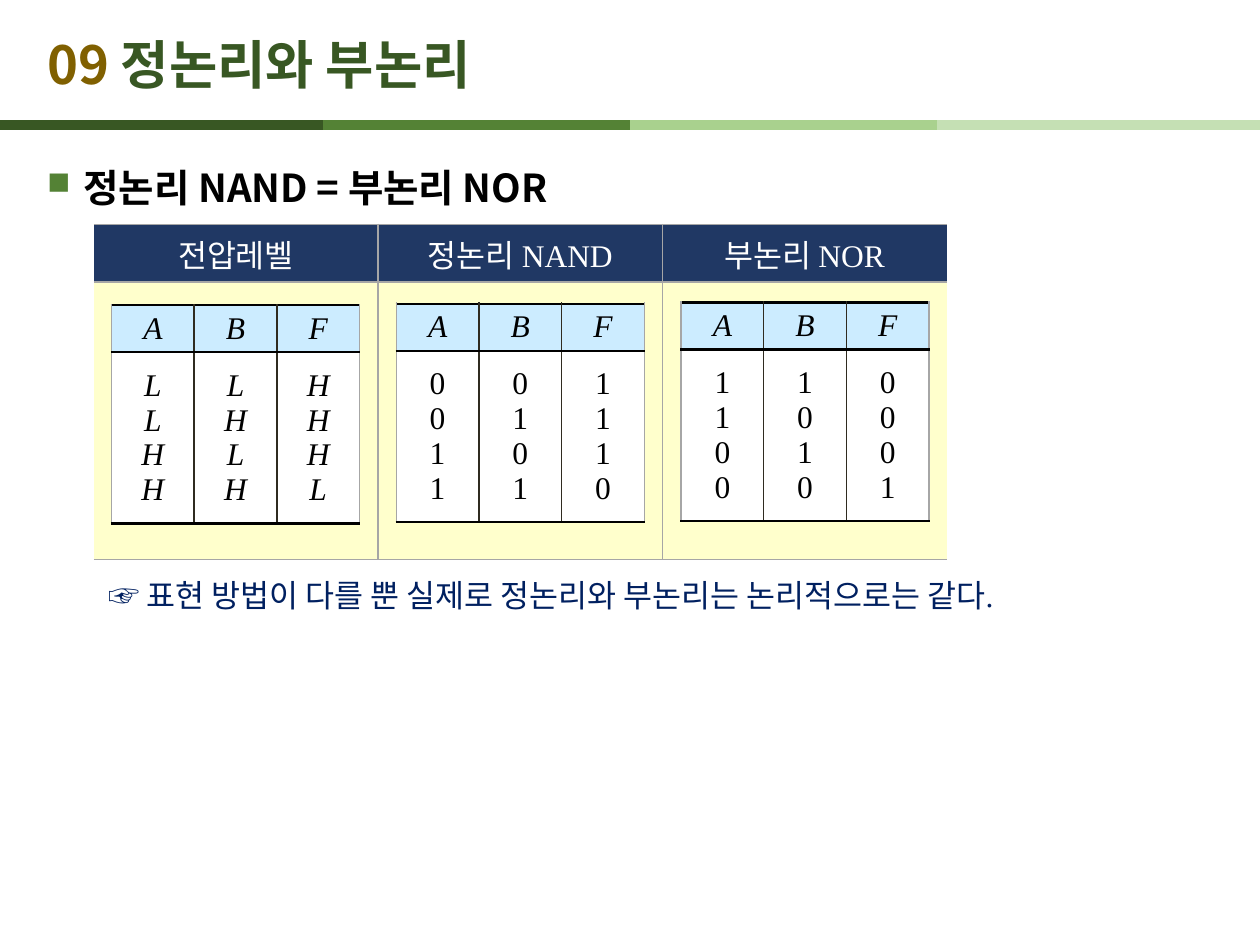
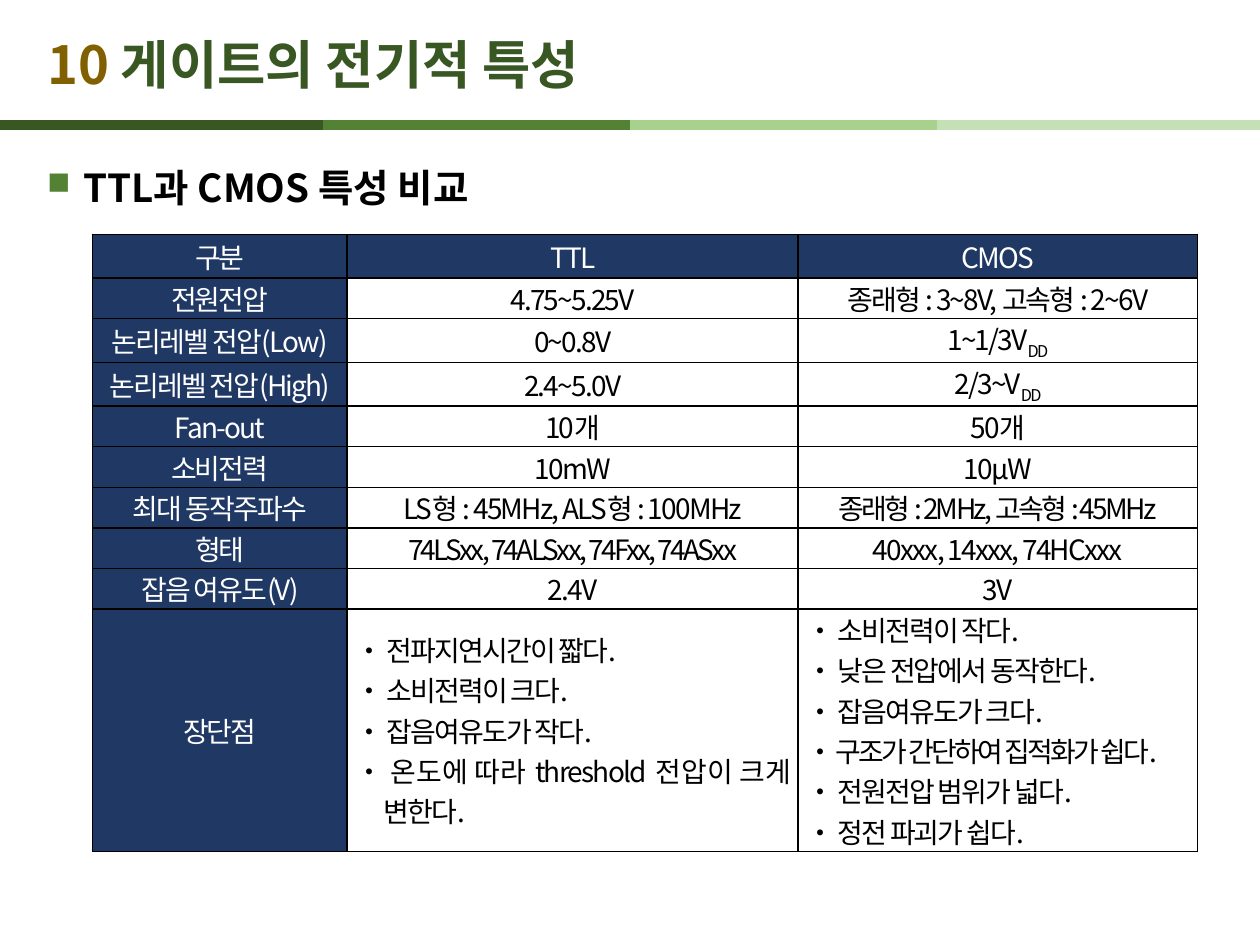
from dataclasses import dataclass

from lxml import etree
from pptx import Presentation
from pptx.dml.color import RGBColor
from pptx.enum.shapes import MSO_CONNECTOR
from pptx.enum.text import MSO_ANCHOR, PP_ALIGN
from pptx.oxml.ns import qn
from pptx.util import Inches, Pt

STRAIGHT = MSO_CONNECTOR.STRAIGHT
TOP, MIDDLE = MSO_ANCHOR.TOP, MSO_ANCHOR.MIDDLE
LEFT, CENTER, JUSTIFY = PP_ALIGN.LEFT, PP_ALIGN.CENTER, PP_ALIGN.JUSTIFY


@dataclass(frozen=True)
class Theme:
    sans: str = "Noto Sans CJK KR"
    serif: str = "Times New Roman"
    bands: tuple = ("385723", "548235", "A9D18E", "C5E0B4")
    number: str = "806000"
    title: str = "385723"
    bullet: str = "548235"
    black: str = "000000"
    white: str = "FFFFFF"
    navy: str = "203864"
    note: str = "002060"
    cream: str = "FFFFCC"
    sky: str = "CCECFF"
    grey: str = "A6A6A6"
    ink: str = "2F2B20"
    title_size: int = 30
    heading_size: int = 22
    table_size: int = 18
    small_size: int = 16


theme = Theme()
UNIT = Inches(0.1)
COLUMNS, ROWS = 100, 75

deck = Presentation()
deck.slide_width, deck.slide_height = COLUMNS * UNIT, ROWS * UNIT


def write(para, text, color, spacing=0, baseline=0, asian=None, **formats):
    span = para.add_run()
    span.text = text
    for name, value in formats.items():
        setattr(span.font, name, value)
    span.font.color.rgb = RGBColor.from_string(color)
    properties = span._r.get_or_add_rPr()
    for name, value in {"spc": spacing, "baseline": baseline}.items():
        if value:
            properties.set(name, str(value))
    if asian:
        etree.SubElement(properties, qn("a:ea"), typeface=asian)


def dress(cell, fill, edges, margins=None, anchor=MIDDLE):
    cell.fill.solid()
    cell.fill.fore_color.rgb = RGBColor.from_string(fill)
    cell.vertical_anchor = anchor
    if margins:
        for side, gap in zip(("left", "top", "right", "bottom"), margins):
            setattr(cell, f"margin_{side}", Inches(gap))
    properties = cell._tc.get_or_add_tcPr()
    for place, (side, edge) in enumerate(zip("LRTB", edges)):
        line = etree.Element(qn(f"a:ln{side}"))
        if edge:
            color, width = edge
            line.set("w", str(Pt(width)))
            solid = etree.SubElement(line, qn("a:solidFill"))
            etree.SubElement(solid, qn("a:srgbClr"), val=color)
        else:
            etree.SubElement(line, qn("a:noFill"))
        properties.insert(place, line)


topics = [
    ("09 ", "정논리와 부논리", "정논리 NAND = 부논리 NOR"),
    ("10 ", "게이트의 전기적 특성", "TTL과 CMOS 특성 비교"),
]
pages = []
for number, title, heading in topics:
    page = deck.slides.add_slide(deck.slide_layouts[6])
    pages.append(page)
    for start, color in zip((0, 25.6, 50, 74.4), theme.bands):
        x, y = int(start * UNIT), int(9.93 * UNIT)
        band = page.shapes.add_connector(STRAIGHT, x, y, x + int(25.6 * UNIT), y)
        band.line.color.rgb = RGBColor.from_string(color)
        band.line.width = Pt(6)
        etree.SubElement(band._element.spPr, qn("a:effectLst"))

    box = page.shapes.add_textbox(*(int(n * UNIT) for n in (2.75, 2.05, 85.8, 6)))
    box.text_frame.word_wrap = True
    box.text_frame.vertical_anchor = MIDDLE
    for text, color in ((number, theme.number), (title, theme.title)):
        write(box.text_frame.paragraphs[0], text, color, name=theme.sans,
              size=Pt(theme.title_size), bold=True)

    box = page.shapes.add_textbox(*(int(n * UNIT) for n in (2.75, 10.7, 94.5, 6.5)))
    box.text_frame.word_wrap = True
    para = box.text_frame.paragraphs[0]
    indent = para._p.get_or_add_pPr()
    for name, value in {"marL": 0.29, "indent": -0.29}.items():
        indent.set(name, str(Inches(value)))
    tint = etree.SubElement(indent, qn("a:buClr"))
    etree.SubElement(tint, qn("a:srgbClr"), val=theme.bullet)
    etree.SubElement(indent, qn("a:buSzPct"), val="82000")
    etree.SubElement(indent, qn("a:buChar"), char="■")
    para.line_spacing = 1.5
    write(para, heading, theme.black, name=theme.sans,
          size=Pt(theme.heading_size), bold=True)

logic_page, gate_page = pages
serif = {"name": theme.serif, "size": Pt(theme.table_size), "bold": False}
grey, ink, rule = (theme.grey, 1), (theme.ink, 1), (theme.black, 1.5)

frame = logic_page.shapes.add_table(2, 3, *(int(n * UNIT) for n in (7.45, 17.8, 67.7, 26.6)))
panel = frame.table
panel.first_row = panel.horz_banding = False
for row, height in zip(panel.rows, (4.6, 22)):
    row.height = int(height * UNIT)
for column, label in enumerate(("전압레벨", "정논리 NAND", "부논리 NOR")):
    edges = (grey if column else None, grey if column < 2 else None, grey, grey)
    dress(panel.cell(0, column), theme.navy, edges, anchor=TOP)
    dress(panel.cell(1, column), theme.cream, edges, anchor=TOP)
    para = panel.cell(0, column).text_frame.paragraphs[0]
    para.alignment = CENTER
    write(para, label, theme.white, **serif)

truth_tables = [("LLHH", "LHLH", "HHHL"), ("0011", "0101", "1110"), ("1100", "1010", "0001")]
for index, values in enumerate(truth_tables):
    place = (8.85 + 22.6 * index, 24.2 - 0.1 * index, 19.7, 17.35)
    frame = logic_page.shapes.add_table(2, 3, *(int(n * UNIT) for n in place))
    truth = frame.table
    truth.first_row = truth.horz_banding = False
    for row, height in zip(truth.rows, (3.75, 13.6)):
        row.height = int(height * UNIT)
    for column, (variable, states) in enumerate(zip("ABF", values)):
        edges = (ink if column else grey, ink if column < 2 else grey, rule, rule)
        for row, (letters, fill) in enumerate(((variable, theme.sky), (states, theme.white))):
            cell = truth.cell(row, column)
            dress(cell, fill, edges, (0.02,) * 4)
            for line, letter in enumerate(letters):
                para = cell.text_frame.add_paragraph() if line else cell.text_frame.paragraphs[0]
                para.alignment = CENTER
                write(para, letter, theme.black, italic=letter.isalpha(), **serif)

box = logic_page.shapes.add_textbox(*(int(n * UNIT) for n in (7.6, 45.2, 89.7, 4.6)))
box.text_frame.word_wrap = True
para = box.text_frame.paragraphs[0]
para.alignment = LEFT
write(para, "☞ 표현 방법이 다를 뿐 실제로 정논리와 부논리는 논리적으로는 같다.", theme.note, **serif)

comparison = [
    ("구분", "TTL", "CMOS"),
    ("전원전압", "4.75~5.25V", "종래형 : 3~8V, 고속형 : 2~6V"),
    ("논리레벨 전압(Low)", "0~0.8V", "1~1/3V_DD"),
    ("논리레벨 전압(High)", "2.4~5.0V", "2/3~V_DD"),
    ("Fan-out", "10개", "50개"),
    ("소비전력", "10mW", "10μW"),
    ("최대 동작주파수", "LS형 : 45MHz, ALS형 : 100MHz", "종래형 : 2MHz, 고속형 : 45MHz"),
    ("형태", "74LSxx, 74ALSxx, 74Fxx, 74ASxx", "40xxx, 14xxx, 74HCxxx"),
    ("잡음 여유도(V)", "2.4V", "3V"),
    (
        "장단점",
        "• 전파지연시간이 짧다.\n• 소비전력이 크다.\n• 잡음여유도가 작다.\n"
        "• 온도에 따라 threshold 전압이 크게 변한다.",
        "• 소비전력이 작다.\n• 낮은 전압에서 동작한다.\n• 잡음여유도가 크다.\n"
        "• 구조가 간단하여 집적화가 쉽다.\n• 전원전압 범위가 넓다.\n• 정전 파괴가 쉽다.",
    ),
]
tight_starts = ("종래형 : 2MHz", "74LSxx", "• 구조가")
row_heights = [3.45, 3.22, 3.49, 3.49] + [3.22] * 5 + [19.25]
frame = gate_page.shapes.add_table(
    len(comparison), 3, *(int(n * UNIT) for n in (7.35, 18.6, 87.7, sum(row_heights))))
table = frame.table
table.first_row = table.horz_banding = False
for column, width in zip(table.columns, (20.2, 35.8, 31.7)):
    column.width = int(width * UNIT)
for row, height in zip(table.rows, row_heights):
    row.height = int(height * UNIT)
for row, entries in enumerate(comparison):
    for column, entry in enumerate(entries):
        cell = table.cell(row, column)
        is_label = row == 0 or column == 0
        dress(cell, theme.navy if is_label else theme.white,
              ((theme.black, 1),) * 4, (0.07, 0, 0.07, 0))
        for line, text in enumerate(entry.split("\n")):
            para = cell.text_frame.add_paragraph() if line else cell.text_frame.paragraphs[0]
            is_point = text.startswith("•")
            para.alignment = JUSTIFY if is_point else CENTER
            if "threshold" in text:
                for name, value in {"marL": 0.22, "indent": -0.22}.items():
                    para._p.get_or_add_pPr().set(name, str(Inches(value)))
            for part, piece in enumerate(text.split("_")):
                write(para, piece, theme.white if is_label else theme.black,
                      spacing=-150 if text.startswith(tight_starts) else -100,
                      baseline=-25000 * part,
                      asian=theme.sans if is_point and line == 0 else None,
                      name=theme.sans, size=Pt(theme.small_size), bold=False)

deck.save("out.pptx")
